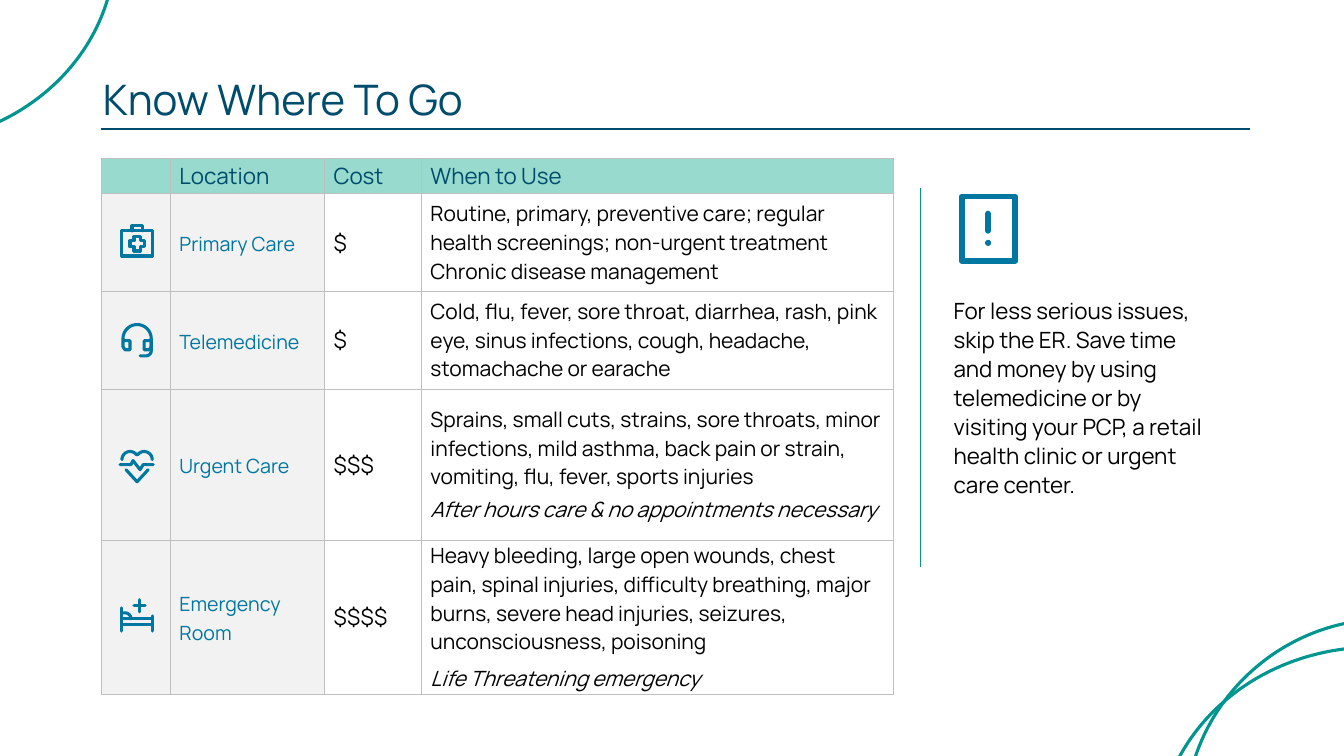
from dataclasses import dataclass
from math import cos, radians, sin

from lxml.etree import SubElement
from pptx import Presentation
from pptx.dml.color import RGBColor
from pptx.enum.shapes import MSO_CONNECTOR, MSO_SHAPE
from pptx.enum.text import MSO_ANCHOR, MSO_AUTO_SIZE, PP_ALIGN
from pptx.oxml import parse_xml
from pptx.oxml.ns import nsdecls, qn
from pptx.util import Inches, Pt

FONT = "Manrope"
NAVY, BLUE, TEAL, BLACK = "004C6C", "0077A0", "00968F", "000000"
MINT, GRAY, WHITE, BORDER = "98DBCE", "F2F2F2", "FFFFFF", "BFBFBF"
Points = list[tuple[float, float]]


@dataclass
class Style:
    size: float
    color: str
    spacing: float | None = None
    before: float = 0
    after: float = 0
    italic: bool = False


@dataclass
class Care:
    location: str
    cost: str
    uses: list[str]
    note: str = ""
    gap: float = 0


@dataclass
class Icon:
    strokes: list[Points]
    weight: float = 2.2


CARE = [
    Care("Primary Care", "$", [
        "Routine, primary, preventive care; regular health screenings; non-urgent treatment",
        "Chronic disease management"]),
    Care("Telemedicine", "$", [
        "Cold, flu, fever, sore throat, diarrhea, rash, pink eye, sinus infections, cough, "
        "headache, stomachache or earache"]),
    Care("Urgent Care", "$$$", [
        "Sprains, small cuts, strains, sore throats, minor infections, mild asthma, back pain "
        "or strain, vomiting, flu, fever, sports injuries"],
        "After hours care & no appointments necessary"),
    Care("Emergency Room", "$$$$", [
        "Heavy bleeding, large open wounds, chest pain, spinal injuries, difficulty breathing, "
        "major burns, severe head injuries, seizures, unconsciousness, poisoning"],
        "Life Threatening emergency", 3),
]


def rgb(value: str) -> RGBColor:
    """Turn a hex string into a colour."""
    return RGBColor.from_string(value)


def arc(x: float, y: float, radius: float, start: int, end: int) -> Points:
    """Return points along a clockwise arc, with angles in degrees."""
    return [(x + radius * cos(radians(a)), y + radius * sin(radians(a)))
            for a in range(start, end + 1, 5)]


def box(left: float, top: float, right: float, bottom: float) -> Points:
    """Return the closed outline of a rectangle."""
    return [(left, top), (right, top), (right, bottom), (left, bottom), (left, top)]


def cross(x: float, y: float, reach: float, arm: float) -> Points:
    """Return the closed outline of a plus sign."""
    quarter = [(reach, -arm), (reach, arm), (arm, arm)]
    outline = []
    for _ in range(4):
        outline += [(x + dx, y + dy) for dx, dy in quarter]
        quarter = [(-dy, dx) for dx, dy in quarter]
    return outline + outline[:1]


def mirror(points: Points, axis: float) -> Points:
    """Reflect points across a vertical axis."""
    return [(2 * axis - x, y) for x, y in points]


MID = 1.36
EAR_PAD = [(1.22, 3.36), (1.22, 3.44), (1.24, 3.47), (1.29, 3.47), (1.29, 3.38), (1.22, 3.38)]
HEART_LOBE = arc(1.29, 4.56, 0.08, 180, 325)
ICONS = [
    Icon([box(1.21, 2.29, 1.51, 2.54), cross(MID, 2.42, 0.07, 0.03),
          [(1.31, 2.29), (1.31, 2.24), (1.41, 2.24), (1.41, 2.29)]]),
    Icon([arc(MID, 3.36, 0.14, 180, 360), EAR_PAD, mirror(EAR_PAD, MID),
          [(1.5, 3.36), *arc(1.45, 3.48, 0.05, 0, 90), (1.39, 3.53)]]),
    Icon([HEART_LOBE, mirror(HEART_LOBE, MID), [(1.25, 4.66), (MID, 4.78), (1.47, 4.66)],
          [(1.19, 4.61), (1.3, 4.61), (1.32, 4.57), (1.39, 4.66), (1.42, 4.61), (1.52, 4.61)]]),
    Icon([[(1.33, 6.01), (1.44, 6.01)], [(1.38, 5.95), (1.38, 6.07)],
          [(1.21, 6.03), (1.21, 6.26)], [(1.51, 6.11), (1.51, 6.26)],
          [(1.21, 6.14), (1.51, 6.14)], [(1.21, 6.2), (1.51, 6.2)],
          [(1.21, 6.08), *arc(1.24, 6.14, 0.06, 270, 360)]]),
    Icon([box(9.54, 1.95, 10.07, 2.59), [(9.8, 2.12), (9.8, 2.29)]], 4.2),
]


def format_paragraph(p, style: Style) -> None:
    """Apply a style to a paragraph and its runs."""
    p.alignment = PP_ALIGN.LEFT
    p.line_spacing = style.spacing
    p.space_before, p.space_after = Pt(style.before), Pt(style.after)
    for r in p.runs:
        r.font.name, r.font.size = FONT, Pt(style.size)
        r.font.bold, r.font.italic = False, style.italic
        r.font.color.rgb = rgb(style.color)


def add_ring(s, left: float, top: float, width: float, height: float) -> None:
    """Draw an unfilled teal ellipse."""
    sp = s.shapes.add_shape(MSO_SHAPE.OVAL, Inches(left), Inches(top), Inches(width), Inches(height))
    sp.shadow.inherit = False
    sp.fill.background()
    sp.line.color.rgb, sp.line.width = rgb(TEAL), Pt(2.25)


def add_rule(s, x1: float, y1: float, x2: float, y2: float, color: str, weight: float) -> None:
    """Draw a straight line."""
    line = s.shapes.add_connector(MSO_CONNECTOR.STRAIGHT, Inches(x1), Inches(y1), Inches(x2), Inches(y2))
    line.line.color.rgb, line.line.width = rgb(color), Pt(weight)
    SubElement(line.element.spPr, qn("a:effectLst"))


def add_icon(s, icon: Icon) -> None:
    """Draw all strokes of an icon as one outline with round ends."""
    builder = None
    for stroke in icon.strokes:
        start, *rest = [(Inches(x), Inches(y)) for x, y in stroke]
        if builder is None:
            builder = s.shapes.build_freeform(*start)
        else:
            builder.move_to(*start)
        builder.add_line_segments(rest, close=stroke[0] == stroke[-1])
    sp = builder.convert_to_shape()
    sp.shadow.inherit = False
    sp.fill.background()
    sp.line.color.rgb, sp.line.width = rgb(BLUE), Pt(icon.weight)
    ln = sp.element.spPr.find(qn("a:ln"))
    ln.set("cap", "rnd")
    SubElement(ln, qn("a:round"))


def fill_cell(cell, fill: str, content: list[tuple[str, Style]]) -> None:
    """Set the fill, borders and styled paragraphs of a cell."""
    cell.fill.solid()
    cell.fill.fore_color.rgb = rgb(fill)
    cell.vertical_anchor = MSO_ANCHOR.MIDDLE
    cell.margin_left = cell.margin_right = Inches(0.09)
    cell.margin_top = cell.margin_bottom = 0
    for i, side in enumerate("LRTB"):
        cell._tc.tcPr.insert(i, parse_xml(
            f'<a:ln{side} {nsdecls("a")} w="3175"><a:solidFill><a:srgbClr val="{BORDER}"/>'
            f'</a:solidFill></a:ln{side}>'))
    cell.text_frame.text = "\n".join(text for text, _ in content)
    for p, (_, style) in zip(cell.text_frame.paragraphs, content):
        format_paragraph(p, style)


def add_care_table(s) -> None:
    """Add the table of care locations."""
    widths, heights = [0.69, 1.53, 0.96, 4.68], [0.35, 0.97, 0.97, 1.5, 1.53]
    table = s.shapes.add_table(len(heights), len(widths), Inches(1), Inches(1.57),
                               Inches(sum(widths)), Inches(sum(heights))).table
    table.horz_banding = False
    for column, width in zip(table.columns, widths):
        column.width = Inches(width)
    for row, height in zip(table.rows, heights):
        row.height = Inches(height)
    rows = [[[], *([(head, Style(16, NAVY))] for head in ("Location", "Cost", "When to Use"))]]
    for care in CARE:
        uses = [(use, Style(15, BLACK, after=care.gap)) for use in care.uses]
        if care.note:
            uses.append((care.note, Style(15, BLACK, before=3, after=care.gap, italic=True)))
        rows.append([[], [(care.location, Style(14, BLUE, 1.1, after=3))],
                     [(care.cost, Style(16, BLACK, after=3))], uses])
    for i, row in enumerate(rows):
        for j, content in enumerate(row):
            fill = MINT if i == 0 else GRAY if j < 2 else WHITE
            fill_cell(table.cell(i, j), fill, content)


def main() -> None:
    """Build the slide and save it."""
    prs = Presentation()
    prs.slide_width, prs.slide_height = Inches(13.33), Inches(7.5)
    s = prs.slides.add_slide(prs.slide_layouts[5])
    for ring in [(11.75, 6.14, 4.02, 4.02), (11.48, 6.42, 4.29, 3.88), (-3.15, -2.45, 4.29, 3.88)]:
        add_ring(s, *ring)
    add_rule(s, 1, 1.28, 12.4, 1.28, NAVY, 1.5)
    title = s.shapes.title
    title.left, title.top, title.width, title.height = Inches(0.92), Inches(0.74), Inches(11.5), Inches(0.54)
    tf = title.text_frame
    tf.text = "Know Where To Go"
    tf.auto_size, tf.vertical_anchor = MSO_AUTO_SIZE.NONE, MSO_ANCHOR.MIDDLE
    format_paragraph(tf.paragraphs[0], Style(30, NAVY, 0.9, after=6))
    add_care_table(s)
    add_rule(s, 9.13, 1.87, 9.13, 5.63, TEAL, 0.5)
    for icon in ICONS:
        add_icon(s, icon)
    dot = s.shapes.add_shape(MSO_SHAPE.OVAL, Inches(9.77), Inches(2.38), Inches(0.06), Inches(0.06))
    dot.shadow.inherit = False
    dot.fill.solid()
    dot.fill.fore_color.rgb = rgb(BLUE)
    dot.line.fill.background()
    tf = s.shapes.add_textbox(Inches(9.36), Inches(2.88), Inches(2.8), Inches(2.24)).text_frame
    tf.word_wrap = True
    p = tf.paragraphs[0]
    p.text = ("For less serious issues, skip the ER. Save time \vand money by using telemedicine "
              "or by visiting your PCP, a retail health clinic or urgent care center.")
    format_paragraph(p, Style(16, BLACK, 1.08))
    prs.save("out.pptx")


if __name__ == "__main__":
    main()
